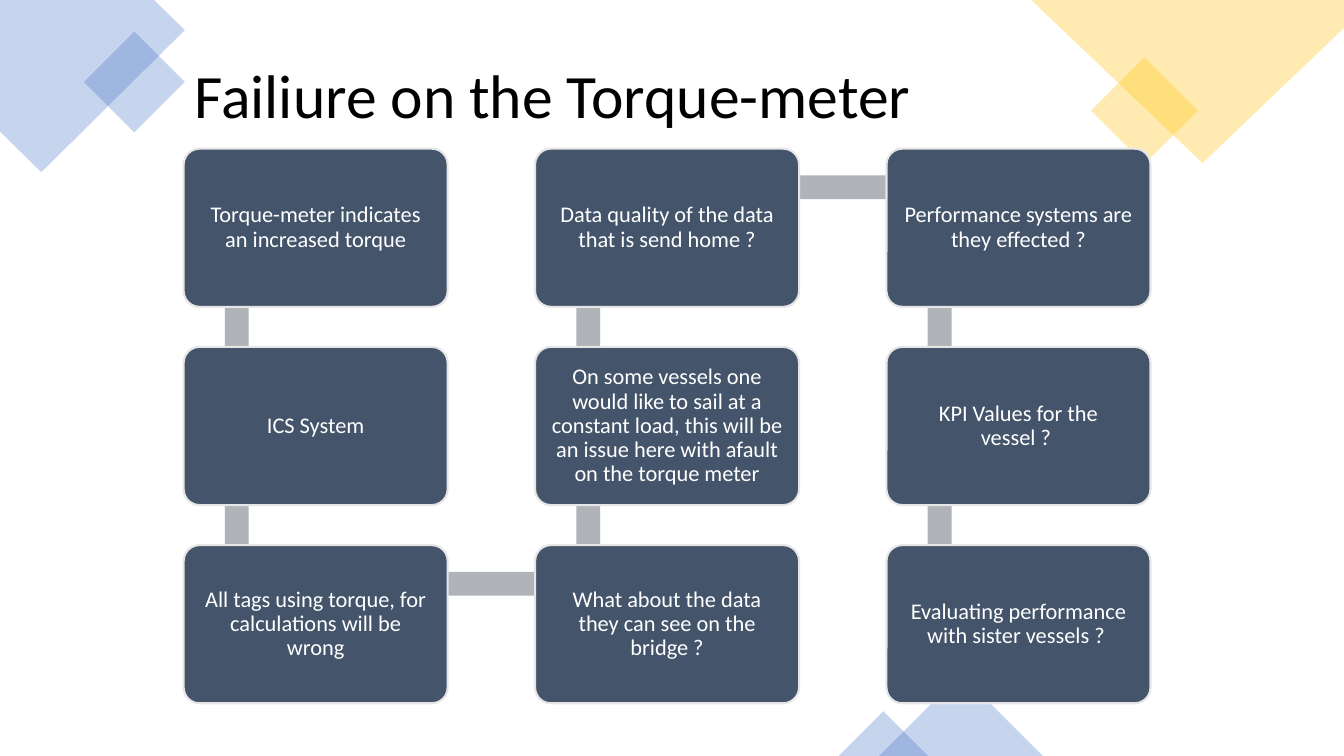
from dataclasses import dataclass
from itertools import pairwise

from lxml.etree import SubElement
from pptx import Presentation
from pptx.dml.color import RGBColor as Color
from pptx.enum.shapes import MSO_SHAPE as Shape
from pptx.enum.text import MSO_ANCHOR as Anchor, MSO_AUTO_SIZE as AutoSize, PP_ALIGN as Align
from pptx.oxml.ns import qn
from pptx.util import Pt


@dataclass(frozen=True)
class Theme:
    font: str = "Calibri"
    title_size: int = 44
    step_size: int = 16
    title: str = "000000"
    step_text: str = "FFFFFF"
    step: str = "44546A"
    outline: str = "E7E6E6"
    link: str = "B0B4B9"
    blue: str = "4472C4"
    gold: str = "FFC000"
    decor_alpha: int = 30000


class SlideBuilder:
    def __init__(self, slide, theme):
        self.slide = slide
        self.theme = theme

    def paint(self, shape, color):
        shape.shadow.inherit = False
        shape.fill.solid()
        shape.fill.fore_color.rgb = Color.from_string(color)
        shape.line.fill.background()
        return shape

    def fade(self, shape):
        color = shape.element.spPr.find(qn("a:solidFill")).find(qn("a:srgbClr"))
        SubElement(color, qn("a:alpha")).set("val", str(self.theme.decor_alpha))

    def block(self, kind, left, top, width, height, color):
        shape = self.slide.shapes.add_shape(kind, Pt(left), Pt(top), Pt(width), Pt(height))
        return self.paint(shape, color)

    def decor(self, kind, left, top, width, height, color, rotation=0):
        shape = self.block(kind, left, top, width, height, color)
        shape.rotation = rotation
        self.fade(shape)

    def corner(self, points, color):
        start, *others = [(Pt(x), Pt(y)) for x, y in points]
        outline = self.slide.shapes.build_freeform(*start)
        outline.add_line_segments(others, close=True)
        self.fade(self.paint(outline.convert_to_shape(), color))

    def set_text(self, frame, text, size, color, align):
        frame.text = text
        frame.word_wrap = True
        frame.auto_size = AutoSize.NONE
        para = frame.paragraphs[0]
        para.alignment = align
        for span in para.runs:
            span.font.name = self.theme.font
            span.font.size = Pt(size)
            span.font.color.rgb = Color.from_string(color)
        return para

    def title(self, text, left, top, width, height):
        box = self.slide.shapes.title
        box.left, box.top, box.width, box.height = Pt(left), Pt(top), Pt(width), Pt(height)
        box.text_frame.vertical_anchor = Anchor.TOP
        para = self.set_text(box.text_frame, text, self.theme.title_size, self.theme.title, Align.LEFT)
        para.space_after = Pt(6)

    def step(self, text, left, top, width, height):
        box = self.block(Shape.ROUNDED_RECTANGLE, left, top, width, height, self.theme.step)
        box.adjustments[0] = 0.1
        box.line.color.rgb = Color.from_string(self.theme.outline)
        box.line.width = Pt(1.5)
        frame = box.text_frame
        frame.vertical_anchor = Anchor.MIDDLE
        frame.margin_left = frame.margin_right = Pt(8.2)
        frame.margin_top = frame.margin_bottom = Pt(8.2)
        para = self.set_text(frame, text, self.theme.step_size, self.theme.step_text, Align.CENTER)
        para.line_spacing = 0.9

    def link(self, start, end, thickness):
        (x1, y1), (x2, y2) = start, end
        if x1 == x2:
            area = x1 - thickness / 2, min(y1, y2), thickness, abs(y2 - y1)
        else:
            area = min(x1, x2), y1 - thickness / 2, abs(x2 - x1), thickness
        self.block(Shape.RECTANGLE, *area, self.theme.link)


STEP_COLUMNS = [
    [
        "Torque-meter indicates an increased torque",
        "ICS System",
        "All tags using torque, for calculations will be wrong",
    ],
    [
        "What about the data they can see on the bridge ?",
        "On some vessels one would like to sail at a constant load, this will be "
        "an issue here with afault on the torque meter",
        "Data quality of the data that is send home ?",
    ],
    [
        "Performance systems are they effected ?",
        "KPI Values for the vessel ? ",
        "Evaluating performance with sister vessels ? ",
    ],
]
GRID_LEFT, GRID_TOP = 131.2, 106.2
COLUMN_PITCH, ROW_PITCH = 251, 141.6
STEP_WIDTH, STEP_HEIGHT = 188.6, 113
LINK_INSET_X, LINK_INSET_Y, LINK_THICKNESS = 38, 27.6, 17


def snake_steps():
    for column, texts in enumerate(STEP_COLUMNS):
        for position, text in enumerate(texts):
            row = position if column % 2 == 0 else len(texts) - 1 - position
            yield text, GRID_LEFT + column * COLUMN_PITCH, GRID_TOP + row * ROW_PITCH


def main():
    deck = Presentation()
    deck.slide_width, deck.slide_height = Pt(960), Pt(540)
    theme = Theme()
    page = SlideBuilder(deck.slides.add_slide(deck.slide_layouts[5]), theme)

    page.corner([(110, 0), (0, 0), (0, 94), (29.5, 123), (132, 21.5)], theme.blue)
    page.decor(Shape.RECTANGLE, 70.5, 33, 51, 51, theme.blue, 315)
    page.decor(Shape.RECTANGLE, 790.5, 52, 54, 54, theme.gold, 315)
    page.corner([(960, 0), (736.5, 0), (859, 116.5), (960, 20)], theme.gold)
    page.decor(Shape.ISOSCELES_TRIANGLE, 628, 481.5, 117, 58.5, theme.blue)
    page.decor(Shape.ISOSCELES_TRIANGLE, 599, 508, 64, 32, theme.blue)
    page.title("Failiure on the Torque-meter", 131.8, 37.4, 605.5, 178.5)

    steps = list(snake_steps())
    anchors = [(left + LINK_INSET_X, top + LINK_INSET_Y) for _, left, top in steps]
    for start, end in pairwise(anchors):
        page.link(start, end, LINK_THICKNESS)
    for text, left, top in steps:
        page.step(text, left, top, STEP_WIDTH, STEP_HEIGHT)

    deck.save("out.pptx")


if __name__ == "__main__":
    main()
